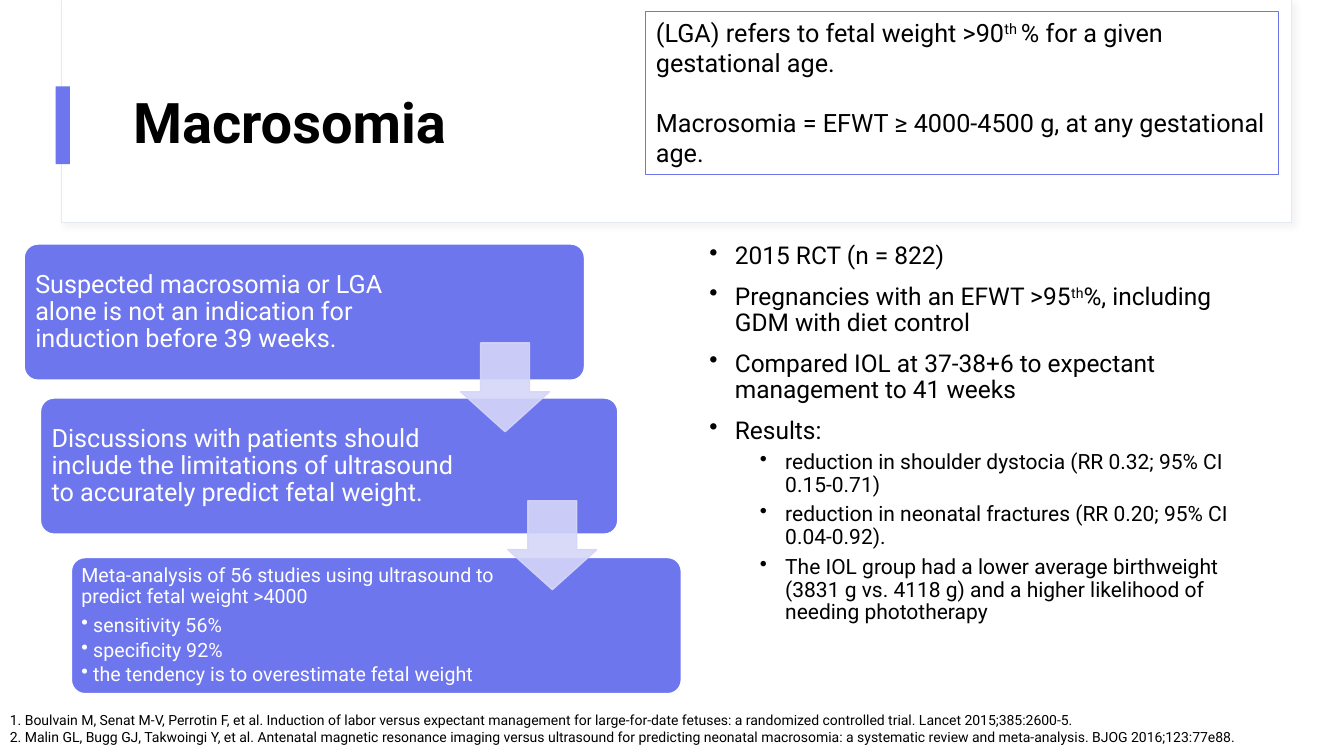
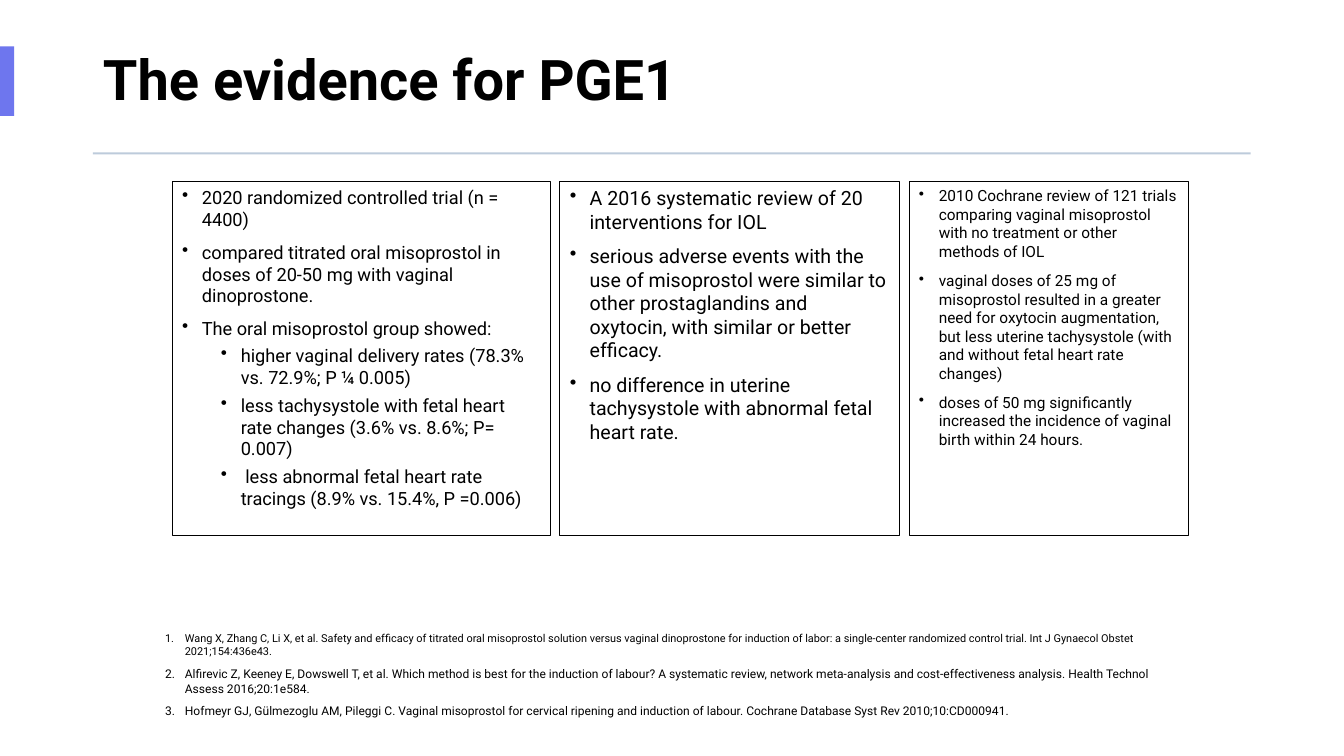
from dataclasses import dataclass, replace
from typing import NamedTuple

from lxml.etree import SubElement as Sub
from pptx import Presentation
from pptx.dml.color import RGBColor as Rgb
from pptx.enum.shapes import MSO_SHAPE as Kind
from pptx.enum.text import MSO_ANCHOR as Anchor
from pptx.enum.text import MSO_AUTO_SIZE as Auto
from pptx.enum.text import PP_ALIGN as Align
from pptx.oxml.ns import qn
from pptx.shapes.autoshape import Shape
from pptx.slide import Slide
from pptx.text.text import TextFrame, _Paragraph as Par
from pptx.util import Cm, Pt

FONT = "Roboto"
HUES = {
    "ink": "000000",
    "white": "FFFFFF",
    "accent": "6E76EE",
    "arrow": "D5D6F8",
    "edge": "E5EAF0",
    "shade": "D9D9D9",
    "rule": "BDCBDB",
}


class Box(NamedTuple):
    left: float
    top: float
    width: float
    height: float


@dataclass(frozen=True)
class Style:
    size: float
    hue: str = "ink"
    bold: bool = False
    line: float = 1.0
    before: float = 0
    after: float = 0
    left: float = 0
    hang: float = 0
    mark: str = ""


class Line(NamedTuple):
    text: str
    style: Style


@dataclass(frozen=True)
class Card:
    box: Box
    lines: list[Line]
    inset: float = 0.18


@dataclass(frozen=True)
class Panel:
    width: float
    lines: list[Line]


HEAD = Style(40, bold=True, line=0.9)
NOTE = Style(18)
CITE = Style(10)
STEP = Style(18, "white", line=0.9)
META = Style(14, "white", line=0.9, after=5.8)
FACT = replace(META, after=2.4, left=0.3, hang=0.3, mark="•")
MAIN = Style(17.5, line=0.9, before=10, left=0.64, hang=0.64, mark="•")
SUB = replace(MAIN, size=15, before=5, left=1.91)
TRIAL = Style(13, before=7.8, left=0.5, hang=0.5, mark="•")
RATE = replace(TRIAL, before=3.9, left=1.48)
REVIEW = replace(TRIAL, size=14)
DOSE = replace(TRIAL, size=11)
SOURCE = Style(8.6, after=6, left=0.5, hang=0.5, mark="1.")

CARDS = [
    Card(Box(0.61, 6.15, 14.12, 3.43), [
        Line("Suspected macrosomia or LGA alone is not an indication for induction before 39 weeks.", STEP),
    ]),
    Card(Box(1.02, 10.03, 14.55, 3.43), [
        Line("Discussions with patients should include the limitations of ultrasound to accurately predict fetal weight.", STEP),
    ]),
    Card(Box(1.8, 14.05, 15.37, 3.43), [
        Line("Meta-analysis of 56 studies using ultrasound to predict fetal weight >4000", META),
        Line("sensitivity 56%", FACT),
        Line("specificity 92%", FACT),
        Line("the tendency is to overestimate fetal weight", FACT),
    ], 0.15),
]
ARROWS = [Box(11.61, 8.64, 2.24, 2.24), Box(12.8, 12.62, 2.24, 2.24)]
STUDY = [
    Line("2015 RCT (n = 822)", MAIN),
    Line("Pregnancies with an EFWT >95^th^%, including GDM with diet control", MAIN),
    Line("Compared IOL at 37-38+6 to expectant management to 41 weeks", MAIN),
    Line("Results:", MAIN),
    Line("reduction in shoulder dystocia (RR 0.32; 95% CI 0.15-0.71)", SUB),
    Line("reduction in neonatal fractures (RR 0.20; 95% CI 0.04-0.92).", SUB),
    Line("The IOL group had a lower average birthweight (3831 g vs. 4118 g) and a higher likelihood of needing phototherapy", SUB),
]
TERMS = [
    Line("(LGA) refers to fetal weight >90^th ^% for a given gestational age.", NOTE),
    Line("Macrosomia = EFWT ≥ 4000-4500 g, at any gestational age.", replace(NOTE, before=21.5)),
]
CITES = [
    Line("1. Boulvain M, Senat M-V, Perrotin F, et al. Induction of labor versus expectant management for large-for-date fetuses: a randomized controlled trial. Lancet 2015;385:2600-5.", CITE),
    Line("2. Malin GL, Bugg GJ, Takwoingi Y, et al. Antenatal magnetic resonance imaging versus ultrasound for predicting neonatal macrosomia: a systematic review and meta-analysis. BJOG 2016;123:77e88.", CITE),
]
PANELS = [
    Panel(9.53, [
        Line("2020 randomized controlled trial (n = 4400)", TRIAL),
        Line("compared titrated oral misoprostol in doses of 20-50 mg with vaginal dinoprostone.", TRIAL),
        Line("The oral misoprostol group showed:", TRIAL),
        Line("higher vaginal delivery rates (78.3% vs. 72.9%; P ¼ 0.005)", RATE),
        Line("less tachysystole with fetal heart rate changes (3.6% vs. 8.6%; P= 0.007)", RATE),
        Line(" less abnormal fetal heart rate tracings (8.9% vs. 15.4%, P =0.006)", RATE),
    ]),
    Panel(8.56, [
        Line("A 2016 systematic review of 20 interventions for IOL", REVIEW),
        Line("serious adverse events with the use of misoprostol were similar to other prostaglandins and oxytocin, with similar or better efﬁcacy.", REVIEW),
        Line("no difference in uterine tachysystole with abnormal fetal heart rate.", REVIEW),
    ]),
    Panel(7.04, [
        Line("2010 Cochrane review of 121 trials comparing vaginal misoprostol with no treatment or other methods of IOL", DOSE),
        Line("vaginal doses of 25 mg of misoprostol resulted in a greater need for oxytocin augmentation, but less uterine tachysystole (with and without fetal heart rate changes)", DOSE),
        Line("doses of 50 mg signiﬁcantly increased the incidence of vaginal birth within 24 hours.", DOSE),
    ]),
]
SOURCES = [
    Line("Wang X, Zhang C, Li X, et al. Safety and efﬁcacy of titrated oral misoprostol solution versus vaginal dinoprostone for induction of labor: a single-center randomized control trial. Int J Gynaecol Obstet 2021;154:436e43.", replace(SOURCE, size=7.8)),
    Line("Alﬁrevic Z, Keeney E, Dowswell T, et al. Which method is best for the induction of labour? A systematic review, network meta-analysis and cost-effectiveness analysis. Health Technol Assess 2016;20:1e584.", SOURCE),
    Line("Hofmeyr GJ, Gülmezoglu AM, Pileggi C. Vaginal misoprostol for cervical ripening and induction of labour. Cochrane Database Syst Rev 2010;10:CD000941.", SOURCE),
]


def tint(name: str) -> Rgb:
    return Rgb.from_string(HUES[name])


def place(box: Box) -> tuple[Cm, ...]:
    return tuple(Cm(side) for side in box)


def indent(par: Par, style: Style) -> None:
    props = par._p.get_or_add_pPr()
    props.set("marL", str(Cm(style.left)))
    props.set("indent", str(-Cm(style.hang)))
    if style.mark == "1.":
        Sub(props, qn("a:buAutoNum"), type="arabicPeriod")
    elif style.mark:
        Sub(props, qn("a:buChar"), char=style.mark)


def format_par(par: Par, style: Style, first: bool) -> None:
    indent(par, style)
    par.alignment = Align.LEFT
    par.line_spacing = style.line
    par.space_before = Pt(0 if first else style.before)
    par.space_after = Pt(style.after)
    font = par.font
    font.name, font.size, font.bold = FONT, Pt(style.size), style.bold
    font.color.rgb = tint(style.hue)


def write(frame: TextFrame, lines: list[Line], anchor: Anchor = Anchor.TOP) -> None:
    frame.word_wrap = True
    frame.auto_size = Auto.NONE
    frame.vertical_anchor = anchor
    for rank, line in enumerate(lines):
        par = frame.add_paragraph() if rank else frame.paragraphs[0]
        format_par(par, line.style, rank == 0)
        for turn, part in enumerate(line.text.split("^")):
            run = par.add_run()
            run.text = part
            if turn % 2:
                run._r.get_or_add_rPr().set("baseline", "30000")


def draw(slide: Slide, box: Box, fill: str = "", edge: str = "",
         width: float = 0.75, kind: Kind = Kind.RECTANGLE) -> Shape:
    shape = slide.shapes.add_shape(kind, *place(box))
    shape.shadow.inherit = False
    if fill:
        shape.fill.solid()
        shape.fill.fore_color.rgb = tint(fill)
    else:
        shape.fill.background()
    if edge:
        shape.line.color.rgb = tint(edge)
        shape.line.width = Pt(width)
    else:
        shape.line.fill.background()
    return shape


def label(slide: Slide, box: Box, lines: list[Line]) -> None:
    write(slide.shapes.add_textbox(*place(box)).text_frame, lines)


def head(slide: Slide, text: str, box: Box, bar: Box) -> None:
    draw(slide, bar, "accent")
    title = slide.shapes.title
    title.left, title.top, title.width, title.height = place(box)
    write(title.text_frame, [Line(text, HEAD)], Anchor.MIDDLE)
    slide.shapes._spTree.append(title._element)


def shade(shape: Shape) -> None:
    glow = Sub(shape._element.spPr.find(qn("a:effectLst")), qn("a:outerShdw"),
               blurRad=str(Pt(4)), dist=str(Pt(3)), dir="2700000", algn="tl")
    tone = Sub(glow, qn("a:srgbClr"), val=HUES["shade"])
    Sub(tone, qn("a:alpha"), val="30000")


def draw_card(slide: Slide, card: Card) -> None:
    shape = draw(slide, card.box, "accent", "white", 1, Kind.ROUNDED_RECTANGLE)
    shape.adjustments[0] = 0.1
    frame = shape.text_frame
    frame.margin_left = frame.margin_top = frame.margin_bottom = Cm(card.inset)
    frame.margin_right = Cm(3.85)
    write(frame, card.lines, Anchor.MIDDLE)


def draw_arrow(slide: Slide, box: Box) -> None:
    arrow = draw(slide, box, "arrow", "arrow", 1, Kind.DOWN_ARROW)
    arrow.adjustments[0], arrow.adjustments[1] = 0.55, 0.45
    for tone in arrow._element.spPr.iter(qn("a:srgbClr")):
        Sub(tone, qn("a:alpha"), val="90000")


def build_macro(slide: Slide) -> None:
    shade(draw(slide, Box(1.55, 0, 31.01, 5.61), "white", "edge"))
    head(slide, "Macrosomia", Box(3.1, 1.52, 28.24, 3.28), Box(1.4, 2.18, 0.36, 1.96))
    for card in CARDS:
        draw_card(slide, card)
    for box in ARROWS:
        draw_arrow(slide, box)
    label(slide, Box(17.63, 6.02, 13.72, 11.51), STUDY)
    write(draw(slide, Box(16.28, 0.3, 15.95, 4.11), edge="accent").text_frame, TERMS)
    label(slide, Box(0, 17.81, 33.87, 1.12), CITES)


def build_proof(slide: Slide) -> None:
    head(slide, "The evidence for PGE1", Box(2.34, 0.69, 29.18, 2.79), Box(0, 1.17, 0.36, 1.75))
    draw(slide, Box(2.34, 3.84, 29.18, 0.05), "rule")
    left, gap = 4.34, 0.24
    for panel in PANELS:
        shape = draw(slide, Box(left, 4.57, panel.width, 8.92), edge="ink")
        write(shape.text_frame, panel.lines)
        left += panel.width + gap
    label(slide, Box(3.91, 15.8, 25.91, 3.1), SOURCES)


def main() -> None:
    deck = Presentation()
    deck.slide_width, deck.slide_height = Cm(33.87), Cm(19.05)
    for build in (build_macro, build_proof):
        build(deck.slides.add_slide(deck.slide_layouts[5]))
    deck.save("out.pptx")


if __name__ == "__main__":
    main()
